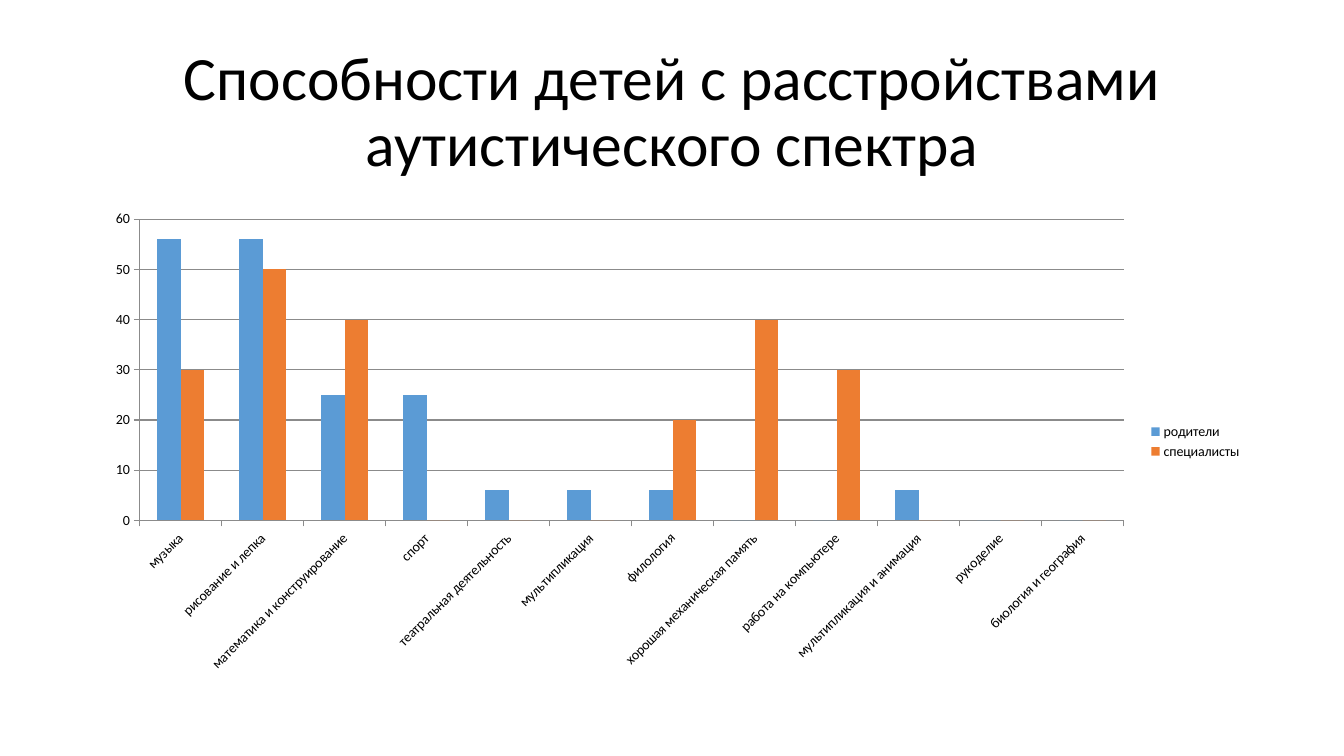
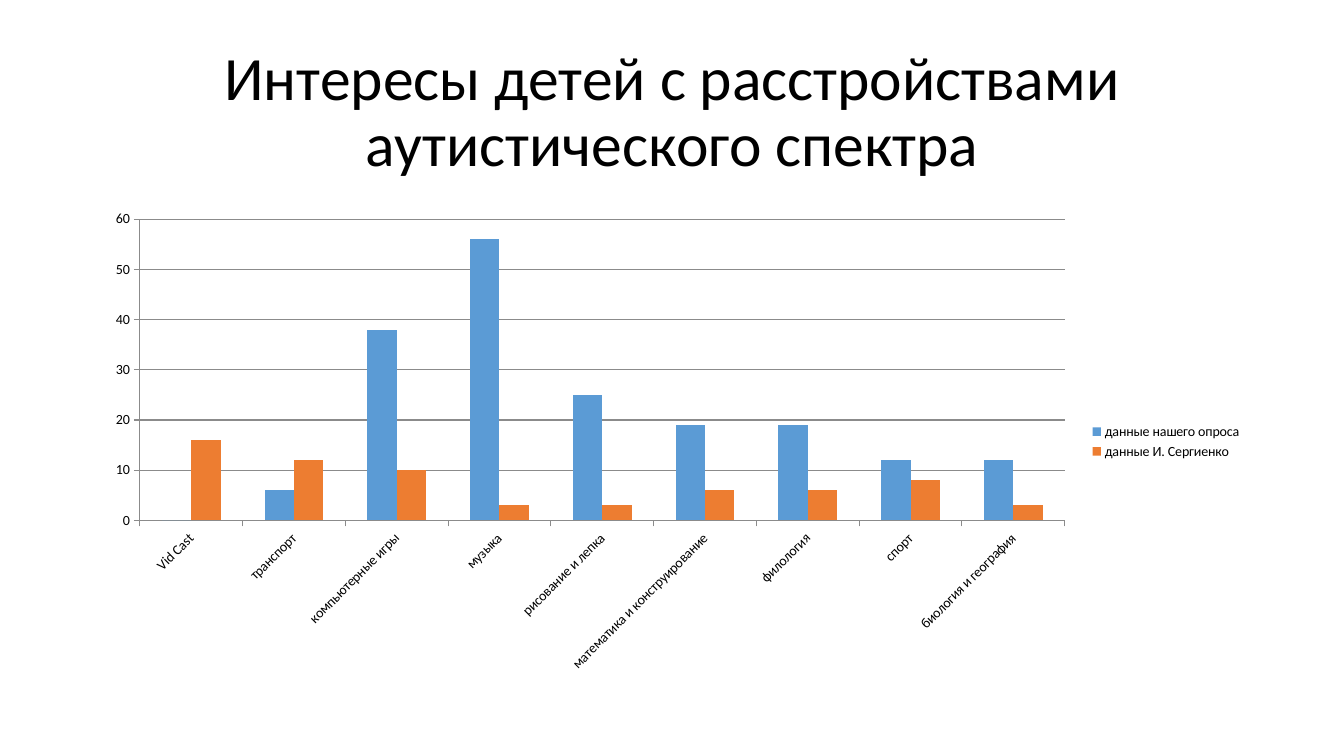
import pptx
import pptx.chart.data
import pptx.dml.color
import pptx.enum.chart
import pptx.enum.text
import pptx.oxml.ns
import pptx.util

Inches = pptx.util.Inches
COLORS = {"text": "000000", "axis": "8B8B8B", "blue": "5B9BD5", "orange": "ED7D31"}
FONT = "Calibri"
LEFT, WIDTH = 0.92, 11.5


def rgb(name):
    return pptx.dml.color.RGBColor.from_string(COLORS[name])


def style_font(font, size, color="text"):
    font.name = FONT
    font.size = pptx.util.Pt(size)
    font.color.rgb = rgb(color)


def write_text(tf, text, size=18, color="text", align="CENTER", spacing=1.0):
    p = tf.paragraphs[0]
    p.alignment = getattr(pptx.enum.text.PP_ALIGN, align)
    p.line_spacing = spacing
    r = p.add_run()
    r.text = text
    style_font(r.font, size, color)


class Deck:
    """Holds the shared style and the current slide."""

    def __init__(self):
        self.prs = pptx.Presentation()
        self.prs.slide_width = Inches(13.33)
        self.prs.slide_height = Inches(7.5)
        self.s = None

    def slide(self):
        self.s = self.prs.slides.add_slide(self.prs.slide_layouts[6])

    def title(self, text):
        sp = self.s.shapes.add_textbox(Inches(LEFT), Inches(0.4), Inches(WIDTH), Inches(1.45))
        tf = sp.text_frame
        tf.word_wrap = True
        tf.vertical_anchor = pptx.enum.text.MSO_ANCHOR.MIDDLE
        write_text(tf, text, size=44, spacing=0.9)

    def column_chart(self, categories, series):
        data = pptx.chart.data.CategoryChartData()
        data.categories = categories
        for name, values in series.items():
            data.add_series(name, values)
        chart = self.s.shapes.add_chart(
            pptx.enum.chart.XL_CHART_TYPE.COLUMN_CLUSTERED,
            Inches(LEFT), Inches(2), Inches(WIDTH), Inches(4.76), data).chart
        chart.has_title = False
        style_font(chart.font, 10)

        # Columns
        plot = chart.plots[0]
        plot.gap_width = 150
        plot.overlap = 0
        plot.vary_by_categories = False
        for ser, color in zip(plot.series, ("blue", "orange")):
            ser.format.fill.solid()
            ser.format.fill.fore_color.rgb = rgb(color)

        # Axes and gridlines
        value_axis, category_axis = chart.value_axis, chart.category_axis
        value_axis.has_major_gridlines = True
        value_axis.minimum_scale, value_axis.maximum_scale = 0, 60
        value_axis.major_unit = 10
        for axis in (value_axis, category_axis):
            axis.major_tick_mark = pptx.enum.chart.XL_TICK_MARK.OUTSIDE
            style_font(axis.tick_labels.font, 10)
        for part in (value_axis, category_axis, value_axis.major_gridlines):
            part.format.line.color.rgb = rgb("axis")
            part.format.line.width = pptx.util.Pt(0.75)

        # Category labels slope upwards by 45 degrees
        body = category_axis._element.find(".//" + pptx.oxml.ns.qn("a:bodyPr"))
        body.set("rot", str(-45 * 60000))

        # Legend
        chart.has_legend = True
        chart.legend.position = pptx.enum.chart.XL_LEGEND_POSITION.RIGHT
        chart.legend.include_in_layout = False
        style_font(chart.legend.font, 10)


SLIDES = [
    ("Способности детей с расстройствами аутистического спектра",
     ["музыка", "рисование и лепка", "математика и конструирование", "спорт",
      "театральная деятельность", "мультипликация", "филология",
      "хорошая механическая память", "работа на компьютере",
      "мультипликация и анимация", "рукоделие", "биология и география"],
     {"родители": [56, 56, 25, 25, 6, 6, 6, 0, 0, 6, 0, 0],
      "специалисты": [30, 50, 40, 0, 0, 0, 20, 40, 30, 0, 0, 0]}),
    ("Интересы детей с расстройствами аутистического спектра",
     ["Vid Cast", "транспорт", "компьютерные игры", "музыка", "рисование и лепка",
      "математика и конструирование", "филология", "спорт", "биология и география"],
     {"данные нашего опроса": [0, 6, 38, 56, 25, 19, 19, 12, 12],
      "данные И. Сергиенко": [16, 12, 10, 3, 3, 6, 6, 8, 3]}),
]


def main():
    deck = Deck()
    for title, categories, series in SLIDES:
        deck.slide()
        deck.title(title)
        deck.column_chart(categories, series)
    deck.prs.save("out.pptx")


if __name__ == "__main__":
    main()
